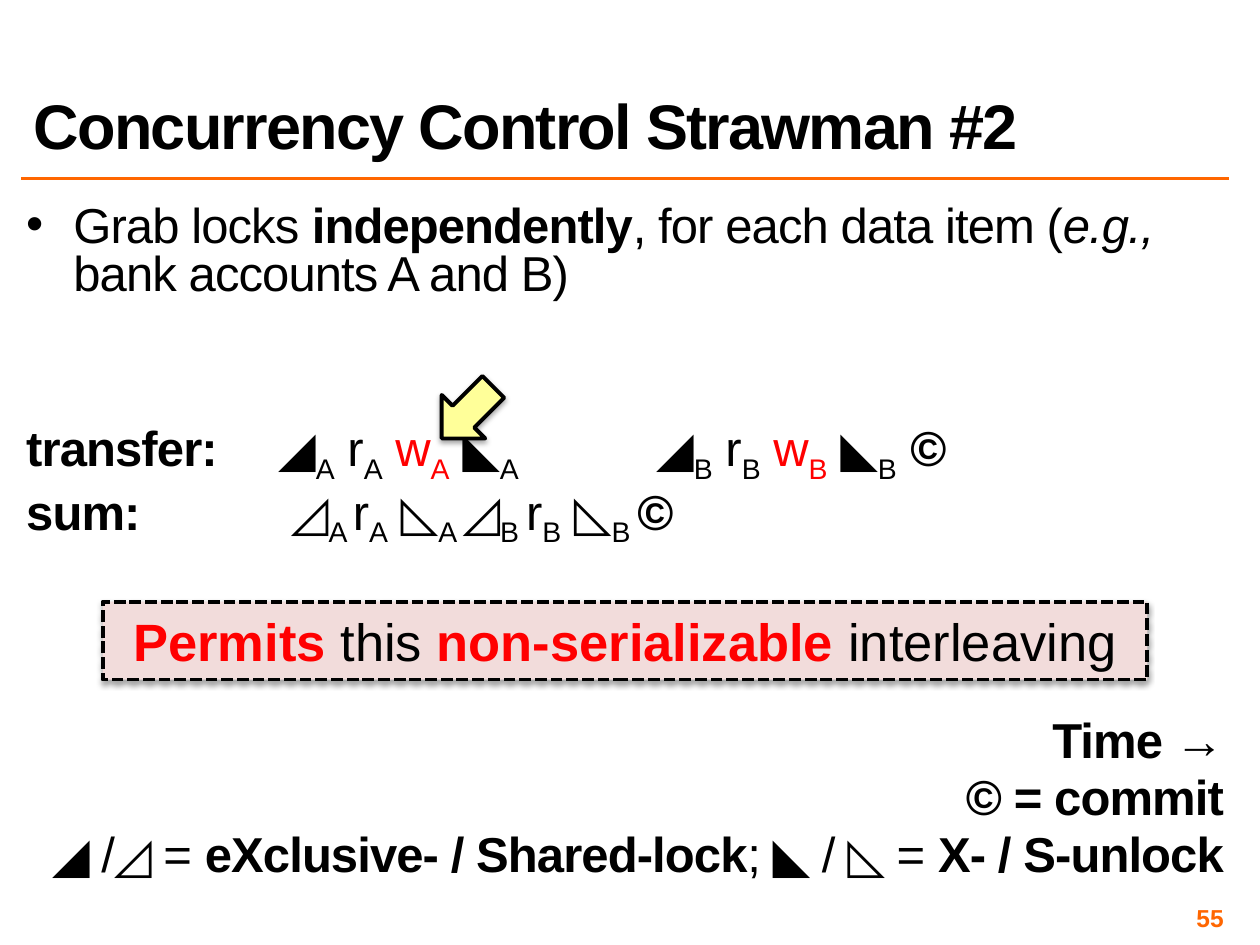
from lxml import etree
from pptx import Presentation
from pptx.dml.color import RGBColor
from pptx.enum.dml import MSO_LINE
from pptx.enum.shapes import MSO_CONNECTOR, MSO_SHAPE
from pptx.enum.text import MSO_ANCHOR, PP_ALIGN
from pptx.oxml.ns import qn
from pptx.util import Cm, Pt

LEFT, RIGHT = PP_ALIGN.LEFT, PP_ALIGN.RIGHT
CENTER = PP_ALIGN.CENTER
TOP, MIDDLE, BOTTOM = MSO_ANCHOR.TOP, MSO_ANCHOR.MIDDLE, MSO_ANCHOR.BOTTOM
BLACK, RED, ORANGE, PINK, YELLOW = "000000", "FF0000", "FF6600", "F2DCDB", "FFFF99"
FONT, BODY_SIZE = "Arial", 28
GAP, BLANK_LINE = 5.6, 32.5  # points
MARGIN, WIDTH = 0.43, 24.34  # cm

# Each run is (text, style): b bold, i italic, s subscript, r red
TITLE = [("Concurrency Control Strawman #2", "b")]
INTRO = [("Grab locks ", ""), ("independently", "b"), (", for each data item (", ""),
         ("e.g., ", "i"), ("bank accounts A and B)", "")]
TRANSFER = [("transfer:", "b"), ("\t◢", ""), ("A", "s"), (" r", ""), ("A", "s"),
            (" w", "r"), ("A", "rs"), (" ◣", ""), ("A", "s"),
            ("\t◢", ""), ("B", "s"), (" r", ""), ("B", "s"),
            (" w", "r"), ("B", "rs"), (" ◣", ""), ("B", "s"), (" ", ""), ("©", "b")]
SUM = [("sum:", "b"), ("\t ◿", ""), ("A ", "s"), ("r", ""), ("A", "s"),
       (" ◺", ""), ("A ", "s"), ("◿", ""), ("B ", "s"), ("r", ""), ("B", "s"),
       (" ◺", ""), ("B ", "s"), ("©", "b")]
TIME = [("Time →", "b")]
COMMIT = [("© = commit", "b")]
LEGEND = [("◢ /◿ = ", ""), ("eXclusive- / Shared-lock", "b"),
          ("; ◣ / ◺ = ", ""), ("X- / S-unlock", "b")]
VERDICT = [("Permits ", "br"), ("this ", ""), ("non-serializable ", "br"),
           ("interleaving", "")]
TABS = (5.08, 12.7)  # cm
# (runs, alignment, blank lines above, tab stops, bulleted)
BODY = [(INTRO, LEFT, 0, (), True),
        (TRANSFER, LEFT, 2, TABS, False),
        (SUM, LEFT, 0, TABS, False),
        (TIME, RIGHT, 3, (), False),
        (COMMIT, RIGHT, 0, (), False),
        (LEGEND, RIGHT, 0, (), False)]


def rgb(value):
    return RGBColor.from_string(value)


def add_xml(parent, tag, **attributes):
    node = etree.SubElement(parent, qn(tag))
    for name, value in attributes.items():
        node.set(name, str(value))
    return node


def write(p, runs, size, align=LEFT, color=BLACK, spacing=0):
    """Fill a paragraph; spacing is the letter spacing in 1/100 pt."""
    p.alignment = align
    p.font.name, p.font.size = FONT, Pt(size)
    for text, style in runs:
        r = p.add_run()
        r.text = text
        r.font.bold, r.font.italic = "b" in style, "i" in style
        r.font.color.rgb = rgb(RED if "r" in style else color)
        properties = r.font._element
        if spacing:
            properties.set("spc", str(spacing))
        if "s" in style:
            properties.set("baseline", "-25000")


def add_text_box(s, x, y, w, h, anchor, inset=None):
    tf = s.shapes.add_textbox(Cm(x), Cm(y), Cm(w), Cm(h)).text_frame
    tf.word_wrap, tf.vertical_anchor = True, anchor
    if inset is not None:
        tf.margin_left = tf.margin_right = tf.margin_top = tf.margin_bottom = Cm(inset)
    return tf


def add_body(s):
    tf = add_text_box(s, MARGIN, 4.06, WIDTH, 13.97, TOP, 0.1)
    for i, (runs, align, blanks, tabs, bulleted) in enumerate(BODY):
        p = tf.add_paragraph() if i else tf.paragraphs[0]
        p.line_spacing = 0.8
        p.space_before = Pt(GAP + blanks * BLANK_LINE)
        pPr = p._p.get_or_add_pPr()
        if bulleted:
            pPr.set("marL", str(Cm(0.95)))
            pPr.set("indent", str(Cm(-0.95)))
            add_xml(pPr, "a:buFont", typeface=FONT)
            add_xml(pPr, "a:buChar", char="•")
        if tabs:
            stops = add_xml(pPr, "a:tabLst")
            for stop in tabs:
                add_xml(stops, "a:tab", pos=Cm(stop), algn="l")
        write(p, runs, BODY_SIZE, align, spacing=-50)


def add_shadowed_shape(s, kind, x, y, w, h, fill):
    sp = s.shapes.add_shape(kind, Cm(x), Cm(y), Cm(w), Cm(h))
    sp.fill.solid()
    sp.fill.fore_color.rgb = rgb(fill)
    sp.line.color.rgb = rgb(BLACK)
    sp.line.width = Pt(2.25)
    sp.shadow.inherit = False
    effects = sp._element.spPr.find(qn("a:effectLst"))
    shadow = add_xml(effects, "a:outerShdw", blurRad=Pt(3.1), dist=Pt(1.8),
                     dir=5400000, rotWithShape=0)
    add_xml(add_xml(shadow, "a:srgbClr", val=BLACK), "a:alpha", val=35000)
    return sp


def main():
    prs = Presentation()
    prs.slide_width, prs.slide_height = Cm(25.4), Cm(19.05)
    s = prs.slides.add_slide(prs.slide_layouts[6])

    rule = s.shapes.add_connector(MSO_CONNECTOR.STRAIGHT, Cm(MARGIN), Cm(3.6),
                                  Cm(MARGIN + WIDTH), Cm(3.6))
    rule.line.color.rgb, rule.line.width = rgb(ORANGE), Pt(2)
    add_xml(rule._element.spPr, "a:effectLst")

    add_body(s)

    tf = add_text_box(s, 18.85, 18.21, 5.92, 0.58, MIDDLE, 0.1)
    write(tf.paragraphs[0], [("55", "b")], 14, RIGHT, ORANGE)

    tf = add_text_box(s, MARGIN, 0.41, WIDTH, 2.97, BOTTOM)
    tf.paragraphs[0].line_spacing = 0.8
    write(tf.paragraphs[0], TITLE, 36, spacing=-100)

    verdict = add_shadowed_shape(s, MSO_SHAPE.RECTANGLE, 2.07, 12.13, 21.06, 1.57, PINK)
    verdict.line.dash_style = MSO_LINE.SQUARE_DOT
    verdict.text_frame.vertical_anchor = MIDDLE
    write(verdict.text_frame.paragraphs[0], VERDICT, 30, CENTER)

    arrow = add_shadowed_shape(s, MSO_SHAPE.LEFT_ARROW, 8.69, 7.7, 1.47, 1.24, YELLOW)
    arrow.rotation = 315

    prs.save("out.pptx")


if __name__ == "__main__":
    main()
